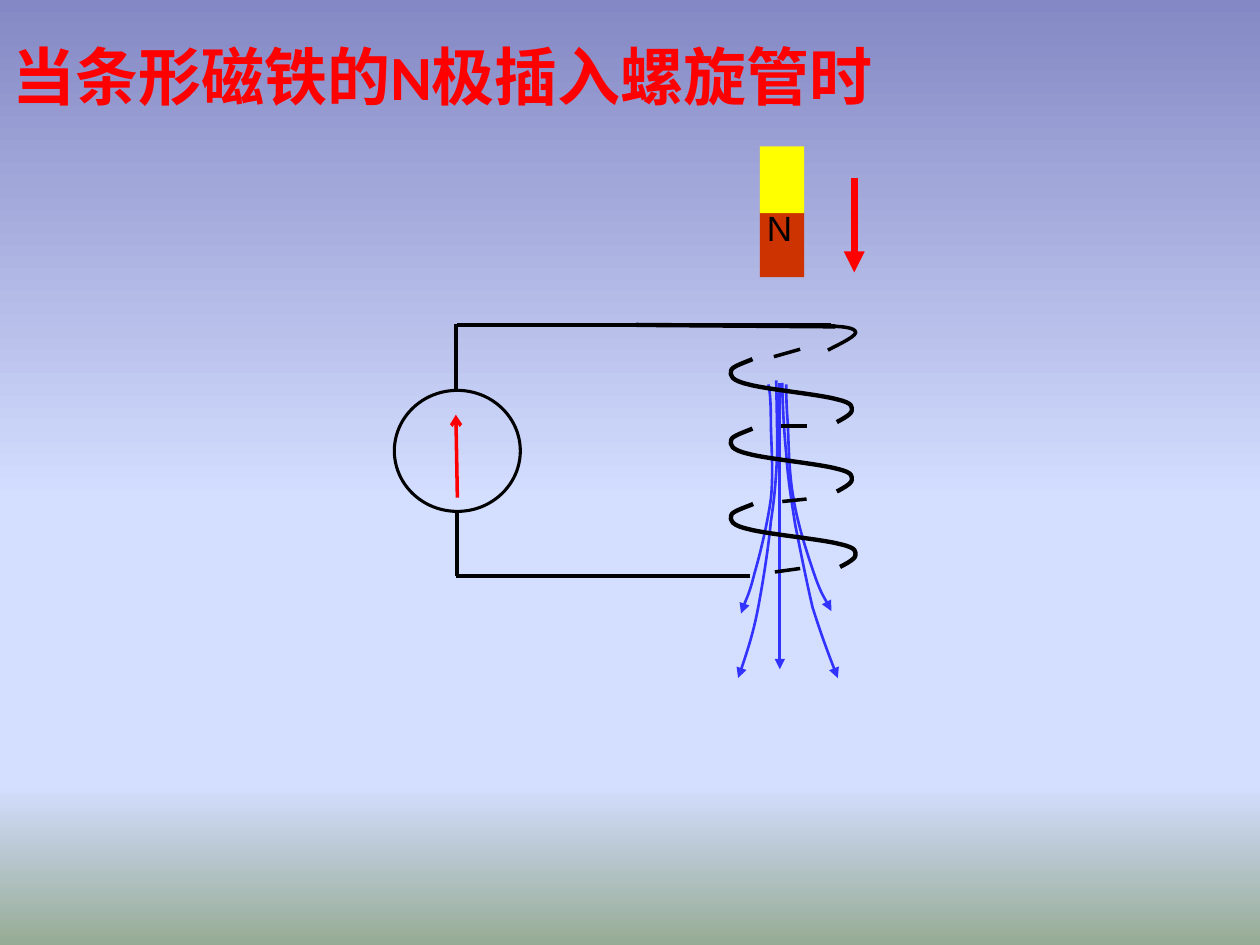
"""Build the slide on pushing a magnet's north pole into a solenoid."""
from lxml import etree
from pptx import Presentation
from pptx.dml.color import RGBColor
from pptx.enum.shapes import MSO_CONNECTOR, MSO_SHAPE
from pptx.oxml.ns import qn
from pptx.util import Cm, Pt

STRAIGHT = MSO_CONNECTOR.STRAIGHT
RECTANGLE, OVAL = MSO_SHAPE.RECTANGLE, MSO_SHAPE.OVAL
COLORS = {"red": "FF0000", "north": "CC3300", "south": "FFFF00",
          "field": "3333FF", "wire": "000000"}
SKY = [(0, "8488C4"), (53, "D4DEFF"), (83, "D4DEFF"), (100, "96AB94")]

FIELD_CURVES = [
    [(15.77, 7.72), (15.77, 7.98), (15.8, 8.66), (15.85, 9.14), (15.88, 9.63),
     (15.95, 10.06), (16.03, 10.57), (16.13, 11.07), (16.26, 11.73),
     (16.38, 12.24), (16.54, 12.75), (16.71, 13.21), (16.89, 13.67)],
    [(15.85, 7.75), (15.85, 7.87), (15.85, 8.13), (15.88, 8.51), (15.9, 8.89),
     (15.9, 9.55), (16, 10.06), (16.08, 10.57), (16.28, 11.18),
     (16.41, 11.56), (16.54, 11.94), (16.69, 12.17), (16.76, 12.32)],
    [(15.49, 7.75), (15.52, 7.87), (15.54, 8.1), (15.54, 8.48), (15.54, 8.86),
     (15.6, 9.53), (15.54, 10.06), (15.47, 10.57), (15.32, 11.18),
     (15.21, 11.56), (15.11, 11.96), (14.99, 12.19), (14.94, 12.37)],
    [(15.65, 7.67), (15.65, 7.92), (15.67, 8.61), (15.67, 9.09), (15.65, 9.58),
     (15.62, 10.01), (15.54, 10.52), (15.49, 11.05), (15.39, 11.68),
     (15.29, 12.22), (15.19, 12.75), (15.04, 13.21), (14.88, 13.67)],
]
COIL_END = [(16.69, 7.06), (16.81, 6.99), (17.22, 6.81), (17.25, 6.71),
            (17.27, 6.6), (16.92, 6.58), (16.81, 6.58), (16.71, 6.55),
            (16.76, 6.58), (16.76, 6.6)]
COIL_LEFT = 14.71
COIL_TURN = [(2.16, 1.27), (2.21, 1.24), (2.46, 1.12), (2.46, 1.04),
             (2.46, 0.97), (2.51, 0.89), (2.16, 0.81), (1.8, 0.71),
             (0.74, 0.61), (0.38, 0.51), (0.03, 0.43), (0, 0.33),
             (0.03, 0.23), (0.03, 0.15), (0.36, 0.05), (0.46, 0)]
TURN_PLACES = [(7.24, 1), (8.64, 1), (10.16, 1.03)]
WIRES = [
    (9.19, 6.53, 9.19, 7.87, 2.25), (9.22, 6.55, 16.76, 6.55, 2.25),
    (9.19, 11.61, 14.71, 11.61, 2.25), (9.22, 10.31, 9.22, 11.61, 2.25),
    (12.52, 11.61, 15.11, 11.61, 2), (16.84, 6.58, 12.83, 6.55, 2.5),
]
COIL_BACKS = [
    (15.6, 7.19, 16.13, 7.04, 2), (15.75, 8.59, 16.26, 8.59, 2),
    (15.77, 10.11, 16.26, 10.06, 2), (15.62, 11.53, 16.13, 11.46, 2),
]


class Diagram:
    """Hold the current slide and the drawing style."""

    def __init__(self, slide):
        self.slide = slide
        self.shapes = slide.shapes

    def background(self, stops):
        fill = self.slide.background.fill
        fill.gradient()
        fill.gradient_angle = 270
        stop_list = self.slide.element.find(".//" + qn("a:gsLst"))
        for stop in list(stop_list):
            stop_list.remove(stop)
        for percent, color in stops:
            stop = etree.SubElement(stop_list, qn("a:gs"), pos=str(percent * 1000))
            etree.SubElement(stop, qn("a:srgbClr"), val=color)

    def stroke(self, drawn, color, width, head=None):
        drawn.line.color.rgb = RGBColor.from_string(COLORS[color])
        drawn.line.width = Pt(width)
        if head:
            outline = drawn.element.find(".//" + qn("a:ln"))
            etree.SubElement(outline, qn("a:tailEnd"), type=head)

    def line(self, x1, y1, x2, y2, width, color="wire", head=None):
        connector = self.shapes.add_connector(
            STRAIGHT, Cm(x1), Cm(y1), Cm(x2), Cm(y2))
        self.stroke(connector, color, width, head)
        etree.SubElement(connector.element.spPr, qn("a:effectLst"))

    def curve(self, points, width, color="wire", head=None):
        start, *rest = [(Cm(x), Cm(y)) for x, y in points]
        builder = self.shapes.build_freeform(*start)
        builder.add_line_segments(rest, close=False)
        curve = builder.convert_to_shape()
        curve.shadow.inherit = False
        curve.fill.background()
        self.stroke(curve, color, width, head)
        path = curve.element.find(".//" + qn("a:path"))
        segments = path.findall(qn("a:lnTo"))
        for i in range(0, len(segments), 3):
            bezier = etree.SubElement(path, qn("a:cubicBezTo"))
            for segment in segments[i:i + 3]:
                bezier.append(segment[0])
                path.remove(segment)

    def shape(self, kind, x, y, width, height, fill=None, outline=None):
        shape = self.shapes.add_shape(kind, Cm(x), Cm(y), Cm(width), Cm(height))
        shape.shadow.inherit = False
        if fill:
            shape.fill.solid()
            shape.fill.fore_color.rgb = RGBColor.from_string(COLORS[fill])
        else:
            shape.fill.background()
        if outline:
            self.stroke(shape, "wire", outline)
        else:
            shape.line.fill.background()

    def text(self, words, x, y, width, height, size, font, color, bold=False, wrap=False):
        frame = self.shapes.add_textbox(
            Cm(x), Cm(y), Cm(width), Cm(height)).text_frame
        frame.word_wrap = wrap
        paragraph = frame.paragraphs[0]
        paragraph.text = words
        paragraph.font.size = Pt(size)
        paragraph.font.name = font
        paragraph.font.bold = bold
        paragraph.font.color.rgb = RGBColor.from_string(COLORS[color])


def main():
    deck = Presentation()
    deck.slide_width, deck.slide_height = Cm(25.4), Cm(19.05)
    diagram = Diagram(deck.slides.add_slide(deck.slide_layouts[6]))
    diagram.background(SKY)

    diagram.line(17.22, 3.58, 17.22, 5.49, 4, "red", "triangle")
    for pole, top in (("north", 4.24), ("south", 2.95)):
        diagram.shape(RECTANGLE, 15.32, top, 0.89, 1.35, fill=pole)
    diagram.text("N", 15.21, 4.04, 1.04, 1.12, 20, "Arial", "wire")

    for points in FIELD_CURVES:
        diagram.curve(points, 1.5, "field", "triangle")
    diagram.line(15.72, 7.72, 15.72, 13.49, 1.5, "field", "triangle")

    diagram.text("当条形磁铁的N极插入螺旋管时", 0, 0.64, 18.08, 1.8, 36,
                 "Calibri", "red", bold=True, wrap=True)

    for segment in WIRES + COIL_BACKS:
        diagram.line(*segment)
    diagram.shape(OVAL, 7.95, 7.87, 2.54, 2.44, outline=1.75)
    diagram.line(9.22, 10.03, 9.19, 8.36, 2, "red", "arrow")

    diagram.curve(COIL_END, 2)
    for top, stretch in TURN_PLACES:
        diagram.curve([(COIL_LEFT + x * stretch, top + y) for x, y in COIL_TURN], 2.5)

    deck.save("out.pptx")


if __name__ == "__main__":
    main()
